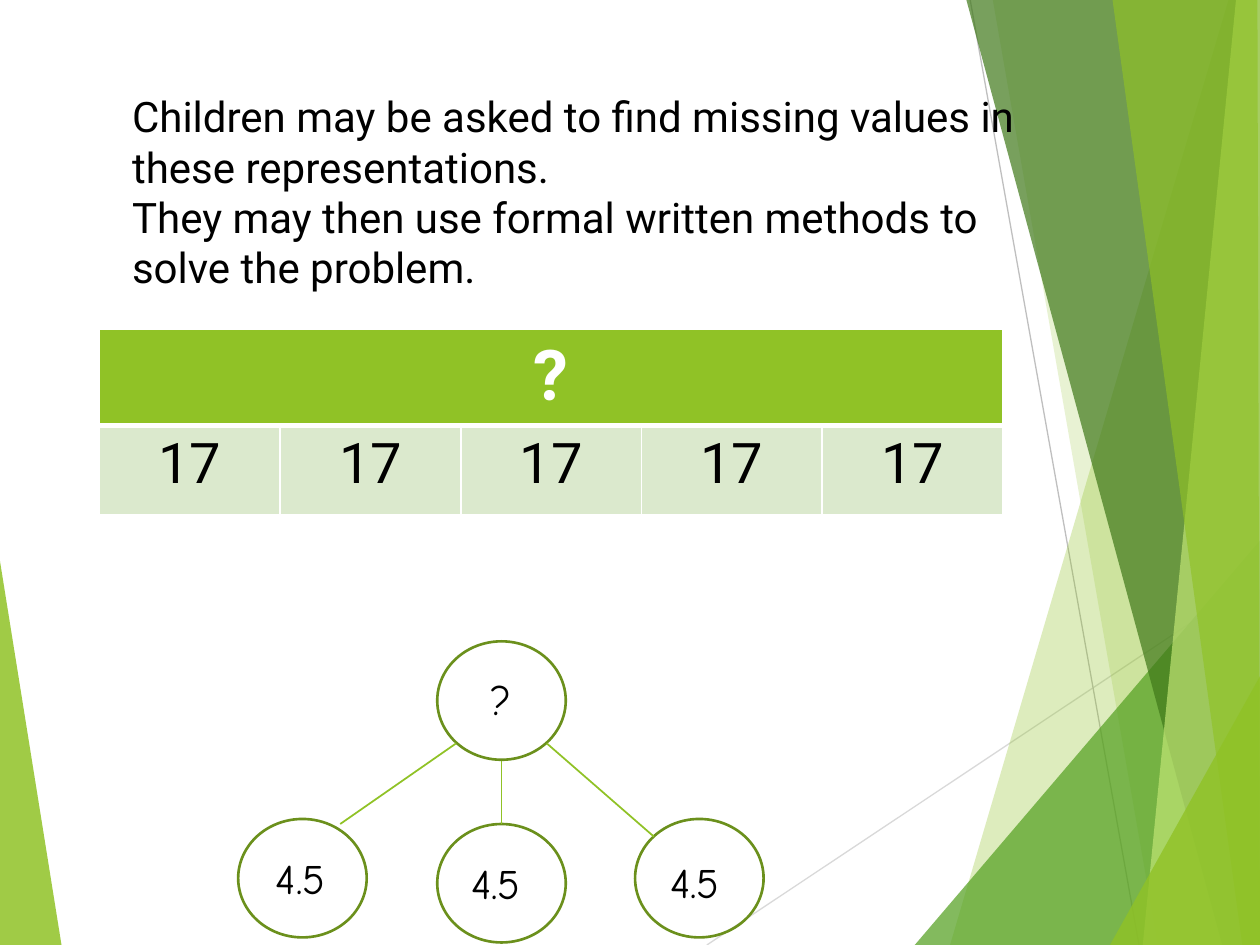
from lxml.etree import SubElement
from pptx import Presentation
from pptx.dml.color import RGBColor
from pptx.enum.shapes import MSO_CONNECTOR, MSO_SHAPE
from pptx.enum.text import PP_ALIGN
from pptx.oxml.ns import qn
from pptx.util import Inches, Pt

GREEN, DARK, BLACK, WHITE = "90C226", "6B901C", "000000", "FFFFFF"


def rgb(color):
    return RGBColor.from_string(color)


class SlideBuilder:
    body_font = "Roboto"
    number_font = "Comic Neue"

    def __init__(self, prs):
        self.s = prs.slides.add_slide(prs.slide_layouts[6])

    def facet(self, points, color, opacity):
        points = [(Inches(x), Inches(y)) for x, y in points]
        builder = self.s.shapes.build_freeform(*points[0], scale=1.0)
        builder.add_line_segments(points[1:], close=True)
        sp = builder.convert_to_shape()
        sp.shadow.inherit = False
        sp.line.fill.background()
        sp.fill.solid()
        sp.fill.fore_color.rgb = rgb(color)
        clr = sp._element.spPr.find(qn("a:solidFill"))[0]
        SubElement(clr, qn("a:alpha")).set("val", str(opacity * 1000))

    def line(self, start, end, color, width):
        ends = [Inches(v) for v in start + end]
        sp = self.s.shapes.add_connector(MSO_CONNECTOR.STRAIGHT, *ends)
        sp.line.color.rgb = rgb(color)
        sp.line.width = Pt(width)
        SubElement(sp._element.spPr, qn("a:effectLst"))

    def circle(self, left, top):
        sp = self.s.shapes.add_shape(MSO_SHAPE.OVAL, Inches(left), Inches(top),
                                     Inches(1.02), Inches(0.94))
        sp.shadow.inherit = False
        sp.fill.background()
        sp.line.color.rgb = rgb(DARK)
        sp.line.width = Pt(1.5)

    def run(self, p, text, size, font, color=BLACK, bold=False):
        r = p.add_run()
        r.text = text
        r.font.size = Pt(size)
        r.font.name = font
        r.font.bold = bold
        r.font.color.rgb = rgb(color)

    def text(self, left, top, width, height, lines, font, align=PP_ALIGN.LEFT):
        box = self.s.shapes.add_textbox(Inches(left), Inches(top),
                                        Inches(width), Inches(height))
        tf = box.text_frame
        tf.word_wrap = True
        p = tf.paragraphs[0]
        p.alignment = align
        for i, line in enumerate(lines):
            if i:
                p.add_line_break()
            self.run(p, line, 24, font)

    def cell(self, cell, fill, bottom):
        tc_pr = cell._tc.get_or_add_tcPr()
        for side, width in (("L", 1), ("R", 1), ("T", 1), ("B", bottom)):
            ln = SubElement(tc_pr, qn(f"a:ln{side}"), w=str(Pt(width)))
            SubElement(SubElement(ln, qn("a:solidFill")), qn("a:srgbClr"), val=WHITE)
        cell.fill.solid()
        cell.fill.fore_color.rgb = rgb(fill)

    def bar_model(self, left, top, total, parts):
        n = len(parts)
        table = self.s.shapes.add_table(2, n, Inches(left), Inches(top),
                                        Inches(7.17), Inches(1.42)).table
        for col in range(n):
            self.cell(table.cell(0, col), GREEN, 3)
            self.cell(table.cell(1, col), "DBE9CD", 1)
        table.cell(0, 0).merge(table.cell(0, n - 1))
        labels = [(table.cell(0, 0), total, 40, WHITE, True)]
        labels += [(table.cell(1, i), part, 32, BLACK, False)
                   for i, part in enumerate(parts)]
        for cell, label, size, color, bold in labels:
            p = cell.text_frame.paragraphs[0]
            p.alignment = PP_ALIGN.CENTER
            self.run(p, label, size, self.body_font, color, bold)


def main():
    prs = Presentation()
    prs.slide_width, prs.slide_height = Inches(10), Inches(7.5)
    b = SlideBuilder(prs)

    b.facet([(-0.01, 4.39), (0.49, 7.51), (-0.01, 7.5)], GREEN, 85)
    b.line((5.61, 7.5), (10.01, 4.57), "D9D9D9", 0.75)
    b.line((7.7, 0), (9.04, 7.5), "BFBFBF", 0.75)
    for top_left, bottom_left, top_right, bottom_right, color, opacity in (
        ((9.75, 0), (7.54, 7.5), (10.01, 0), (10.02, 7.5), GREEN, 30),
        ((7.88, 0), (9.19, 7.5), (10.01, 0), (10.01, 7.5), GREEN, 20),
        ((10, 4.29), (7.26, 7.5), (10, 4.29), (10.01, 7.5), "54A021", 72),
        ((7.67, 0), (9.7, 7.5), (10.01, 0), (10.01, 7.5), "3F7819", 70),
        ((9.81, 0), (9.07, 7.5), (10, 0), (10.01, 7.5), "C0E474", 70),
        ((8.83, 0), (9.86, 7.5), (9.98, 0), (10, 7.5), GREEN, 65),
        ((10.01, 5.35), (8.81, 7.5), (10.01, 5.35), (10.01, 7.5), GREEN, 80),
    ):
        b.facet([top_left, bottom_left, bottom_right, top_right], color, opacity)

    b.text(0.95, 0.67, 7.28, 1.71, [
        "Children may be asked to find missing values in these representations.",
        "They may then use formal written methods to solve the problem.",
    ], b.body_font)
    b.bar_model(0.79, 2.61, "?", ["17"] * 5)

    for left, top in ((3.47, 5.09), (1.89, 6.5), (5.04, 6.5), (3.47, 6.54)):
        b.circle(left, top)
    for start, end in (((4.34, 5.9), (5.19, 6.64)),
                       ((3.98, 6.04), (3.98, 6.54)),
                       ((3.62, 5.9), (2.7, 6.54))):
        b.line(start, end, GREEN, 1)
    for left, top in ((2.09, 6.72), (3.64, 6.76), (5.22, 6.75)):
        b.text(left, top, 0.79, 0.5, ["4.5"], b.number_font)
    b.text(3.58, 5.3, 0.79, 0.5, ["?"], b.number_font, PP_ALIGN.CENTER)

    prs.save("out.pptx")


if __name__ == "__main__":
    main()
